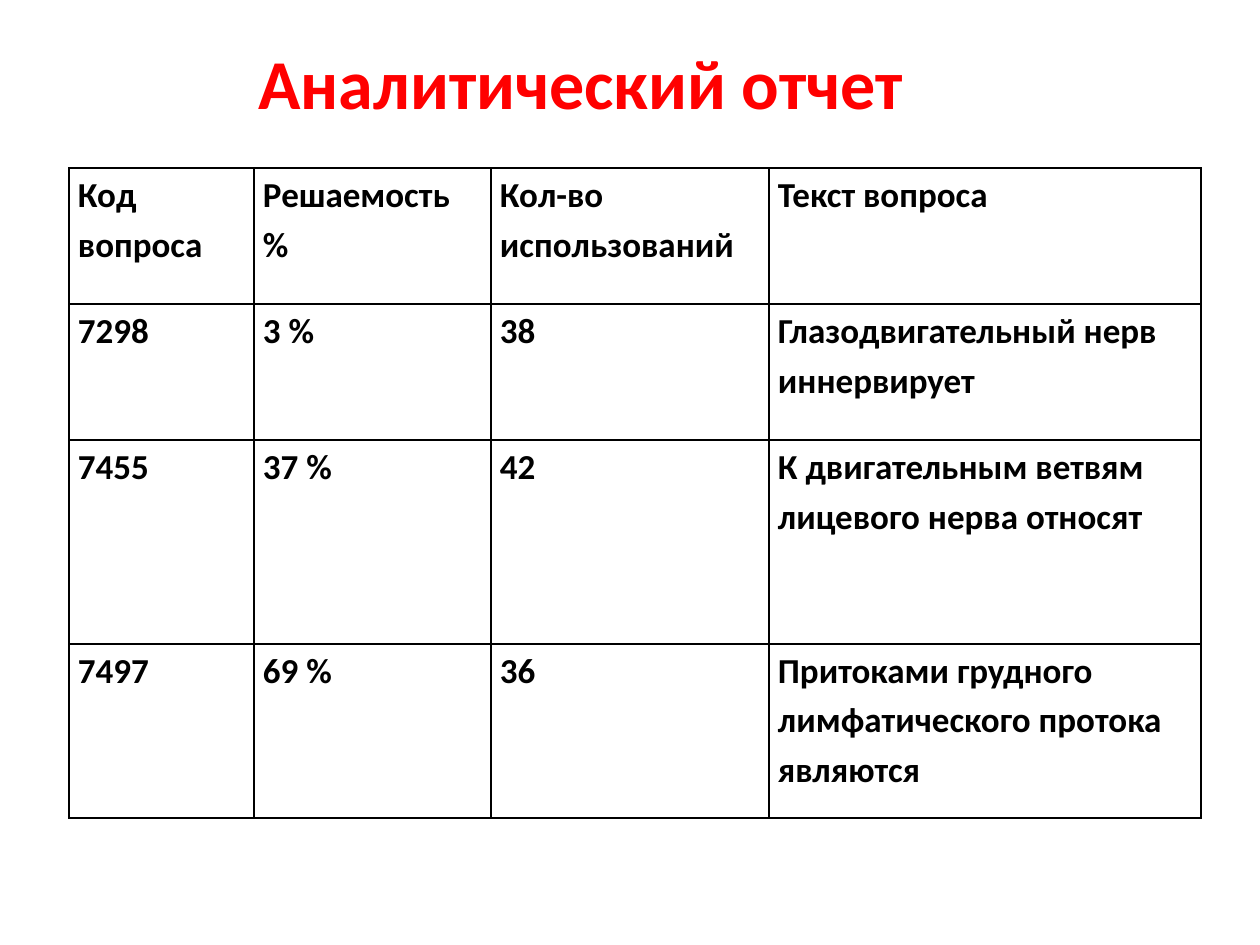
"""Build the analytical report slide: a red heading above a bordered table of questions."""
from lxml.etree import SubElement
from pptx import Presentation
from pptx.dml.color import RGBColor
from pptx.enum.text import MSO_ANCHOR as Anchor, PP_ALIGN as Align
from pptx.oxml.ns import qn
from pptx.util import Emu, Pt


def px(count):
    return Emu(round(count * 914400 / 126))


def color(code):
    return RGBColor.from_string(code)


BLACK = "000000"
HEADING = {"name": "Calibri", "size": Pt(40), "bold": True}
BODY = {"name": "Calibri", "size": Pt(20), "bold": True}
MARGINS = {"margin_left": px(9), "margin_right": px(9), "margin_top": 0, "margin_bottom": 0}
COLUMN_WIDTHS = [185, 237, 278, 432]
ROW_HEIGHTS = [136, 136, 204, 174]
QUESTIONS = [
    ["Код вопроса", "Решаемость %", "Кол-во использований", "Текст вопроса"],
    ["7298", "3 %", "38", "Глазодвигательный нерв иннервирует"],
    ["7455", "37 %", "42", "К двигательным ветвям лицевого нерва относят"],
    ["7497", "69 %", "36", "Притоками грудного лимфатического протока являются"],
]

deck = Presentation()
deck.slide_width, deck.slide_height = px(1260), px(945)
page = deck.slides.add_slide(deck.slide_layouts[6])

title_box = page.shapes.add_textbox(px(246), px(49), px(756), px(81))
title_frame = title_box.text_frame
title_frame.word_wrap = True
title_frame.vertical_anchor = Anchor.BOTTOM
title_para = title_frame.paragraphs[0]
title_para.alignment = Align.LEFT
title_span = title_para.add_run()
title_span.text = "Аналитический отчет"
for name, value in HEADING.items():
    setattr(title_span.font, name, value)
title_span.font.color.rgb = color("FF0000")

table_frame = page.shapes.add_table(
    len(ROW_HEIGHTS), len(COLUMN_WIDTHS),
    px(69), px(168), px(sum(COLUMN_WIDTHS)), px(sum(ROW_HEIGHTS)),
)
table = table_frame.table
table.first_row = table.horz_banding = False
for column, width in zip(table.columns, COLUMN_WIDTHS):
    column.width = px(width)
for row, height, texts in zip(table.rows, ROW_HEIGHTS, QUESTIONS):
    row.height = px(height)
    for cell, text in zip(row.cells, texts):
        for name, value in MARGINS.items():
            setattr(cell, name, value)
        para = cell.text_frame.paragraphs[0]
        para.line_spacing = 1.15
        span = para.add_run()
        span.text = text
        for name, value in BODY.items():
            setattr(span.font, name, value)
        span.font.color.rgb = color(BLACK)
        properties = cell._tc.get_or_add_tcPr()
        for side in ("a:lnL", "a:lnR", "a:lnT", "a:lnB"):
            border = SubElement(properties, qn(side), w=str(Pt(1)))
            paint = SubElement(border, qn("a:solidFill"))
            SubElement(paint, qn("a:srgbClr"), val=BLACK)
        cell.fill.background()

deck.save("out.pptx")
